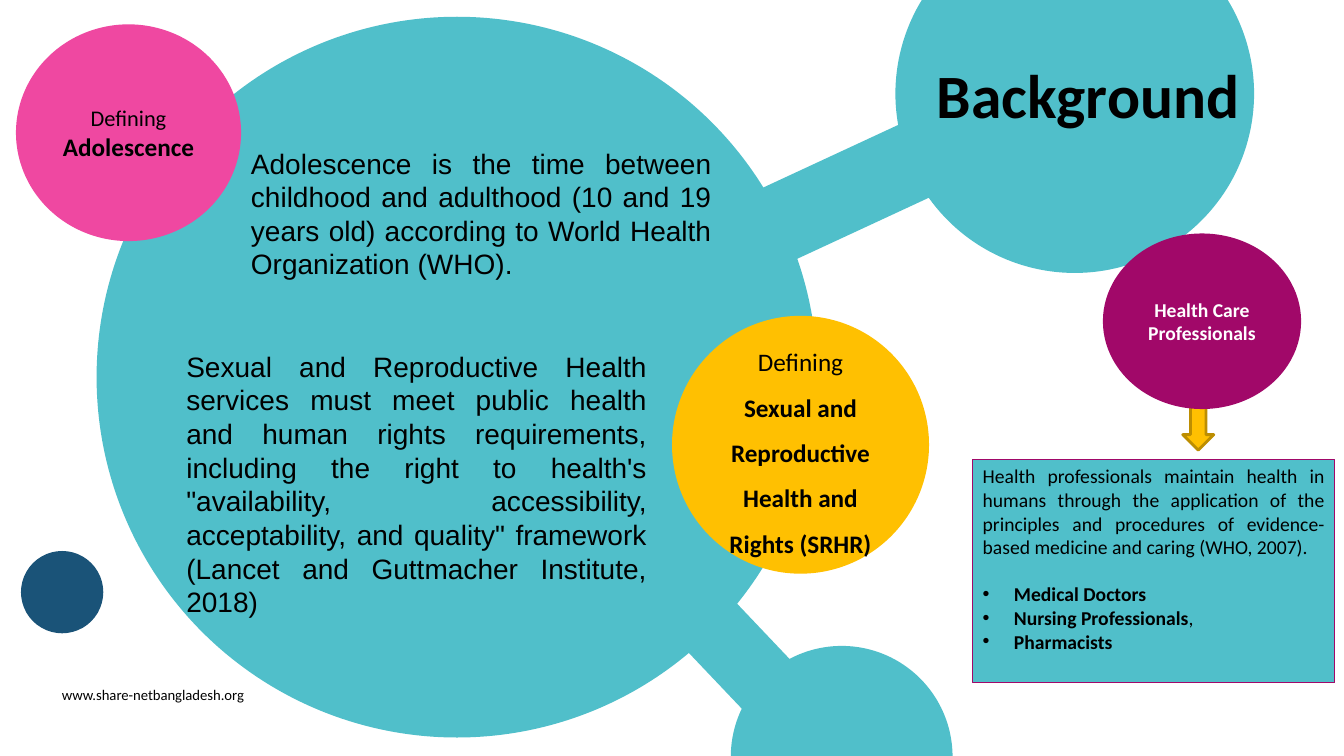
from lxml.etree import SubElement
from pptx import Presentation
from pptx.dml.color import RGBColor
from pptx.enum.shapes import MSO_SHAPE as Shape
from pptx.enum.text import MSO_ANCHOR as Anchor, MSO_AUTO_SIZE as AutoSize, PP_ALIGN as Align
from pptx.oxml.ns import qn
from pptx.util import Inches, Pt

WIDTH, HEIGHT = Inches(13.33), Inches(7.5)
COLS, ROWS = 16, 9
COLORS = {
    "teal": "50BFCA", "pink": "EF48A1", "plum": "A10869", "yellow": "FFC001",
    "gold": "BD8E01", "navy": "1A5378", "black": "000000", "white": "FFFFFF",
}


def rgb(name):
    return RGBColor.from_string(COLORS[name])


def place(col, row, cols, rows):
    """Turn grid columns and rows into left, top, width and height."""
    return (int(WIDTH * col / COLS), int(HEIGHT * row / ROWS),
            int(WIDTH * cols / COLS), int(HEIGHT * rows / ROWS))


def add_bullet(p):
    pPr = p._p.get_or_add_pPr()
    pPr.set("marL", str(Inches(0.31)))
    pPr.set("indent", str(-Inches(0.31)))
    SubElement(pPr, qn("a:buFont")).set("typeface", "Arial")
    SubElement(pPr, qn("a:buChar")).set("char", "•")


def write(p, runs, size, align=Align.LEFT, font="Calibri", color="black", spacing=None):
    """Fill a paragraph with (text, bold) runs."""
    p.alignment = align
    p.line_spacing = spacing
    for text, bold in runs:
        r = p.add_run()
        r.text = text
        r.font.size, r.font.name, r.font.bold = Pt(size), font, bold
        r.font.color.rgb = rgb(color)


def add_block(slide, kind, cell, fill, line=None, line_width=1.0, rotation=0):
    sp = slide.shapes.add_shape(kind, *place(*cell))
    sp.shadow.inherit = False
    sp.rotation = rotation
    sp.fill.solid()
    sp.fill.fore_color.rgb = rgb(fill)
    if line:
        sp.line.color.rgb = rgb(line)
        sp.line.width = Pt(line_width)
    else:
        sp.line.fill.background()
    return sp


def add_bubble(slide, cell, fill, paragraphs, size, **style):
    tf = add_block(slide, Shape.OVAL, cell, fill).text_frame
    tf.word_wrap = True
    tf.vertical_anchor = Anchor.MIDDLE
    for i, runs in enumerate(paragraphs):
        p = tf.add_paragraph() if i else tf.paragraphs[0]
        write(p, runs, size, Align.CENTER, **style)
    return tf


def add_text(slide, cell, text, size, **style):
    tf = slide.shapes.add_textbox(*place(*cell)).text_frame
    tf.word_wrap = True
    write(tf.paragraphs[0], [(text, False)], size, **style)


def add_backdrop(slide):
    for col, row, diameter in ((1.15, 0.2, 8.58), (8.7, 7.69, 2.64), (10.66, -1.02, 4.27)):
        add_block(slide, Shape.OVAL, (col, row, diameter, diameter), "teal")
    for cell, rotation in (((8.32, 7.42, 1, 0.82), 46.5), ((8.95, 1.73, 2.65, 0.94), 335.1)):
        add_block(slide, Shape.RECTANGLE, cell, "teal", rotation=rotation)
    add_text(slide, (0.62, 8.1, 2.6, 0.34), "www.share-netbangladesh.org", 10.5)


def add_title(slide):
    sp = slide.shapes.title
    slide.shapes.element.append(sp.element)  # bring in front of the backdrop
    sp.left, sp.top, sp.width, sp.height = place(11.06, 0.2, 3.91, 1.94)
    tf = sp.text_frame
    tf.auto_size = AutoSize.NONE
    tf.vertical_anchor = Anchor.MIDDLE
    tf.margin_left = 0
    write(tf.paragraphs[0], [("Background", True)], 44, Align.CENTER, spacing=0.9)


def add_professionals(slide):
    sp = add_block(slide, Shape.RECTANGLE, (11.58, 5.47, 4.31, 2.66), "teal", "plum", 0.75)
    tf = sp.text_frame
    tf.word_wrap = True
    tf.vertical_anchor = Anchor.TOP
    write(tf.paragraphs[0], [(
        "Health professionals maintain health in humans through the application of the "
        "principles and procedures of evidence-based medicine and caring (WHO, 2007).",
        False)], 14, Align.JUSTIFY)
    professions = (
        [("Medical Doctors", True)],
        [("Nursing Professionals", True), (",", False)],
        [("Pharmacists", True)],
    )
    for i, runs in enumerate(professions):
        p = tf.add_paragraph()
        add_bullet(p)
        p.space_before = Pt(0 if i else 17)
        write(p, runs, 14, Align.JUSTIFY)


def main():
    prs = Presentation()
    prs.slide_width, prs.slide_height = WIDTH, HEIGHT
    slide = prs.slides.add_slide(prs.slide_layouts[5])

    add_backdrop(slide)
    add_block(slide, Shape.DOWN_ARROW, (14.08, 4.16, 0.37, 1.2), "yellow", "gold", 2)
    add_bubble(slide, (13.13, 2.78, 2.36, 2.09), "plum",
               [[("Health Care Professionals", True)]], 14, color="white")
    add_title(slide)
    add_bubble(slide, (8, 3.76, 3.06, 3.07), "yellow",
               [[("Defining", False)],
                [("Sexual and Reproductive Health and Rights (SRHR)", True)]],
               18, spacing=1.5)
    tf = add_bubble(slide, (0.19, 0.29, 2.68, 2.58), "pink",
                    [[("Defining ", False), ("Adolescence", True)]], 18)
    tf.paragraphs[0].runs[0].font.size = Pt(16)
    add_block(slide, Shape.OVAL, (0.25, 6.56, 0.98, 0.98), "navy")

    body = {"size": 20, "font": "Arial", "align": Align.JUSTIFY}
    add_text(slide, (2.87, 1.68, 5.72, 1.74),
             "Adolescence is the time between childhood and adulthood (10 and 19 years old) "
             "according to World Health Organization (WHO).", **body)
    add_text(slide, (2.1, 4.1, 5.72, 2.95),
             "Sexual and Reproductive Health services must meet public health and human "
             "rights requirements, including the right to health's \"availability, "
             "accessibility, acceptability, and quality\" framework (Lancet and Guttmacher "
             "Institute, 2018)", **body)
    add_professionals(slide)
    prs.save("out.pptx")


if __name__ == "__main__":
    main()
